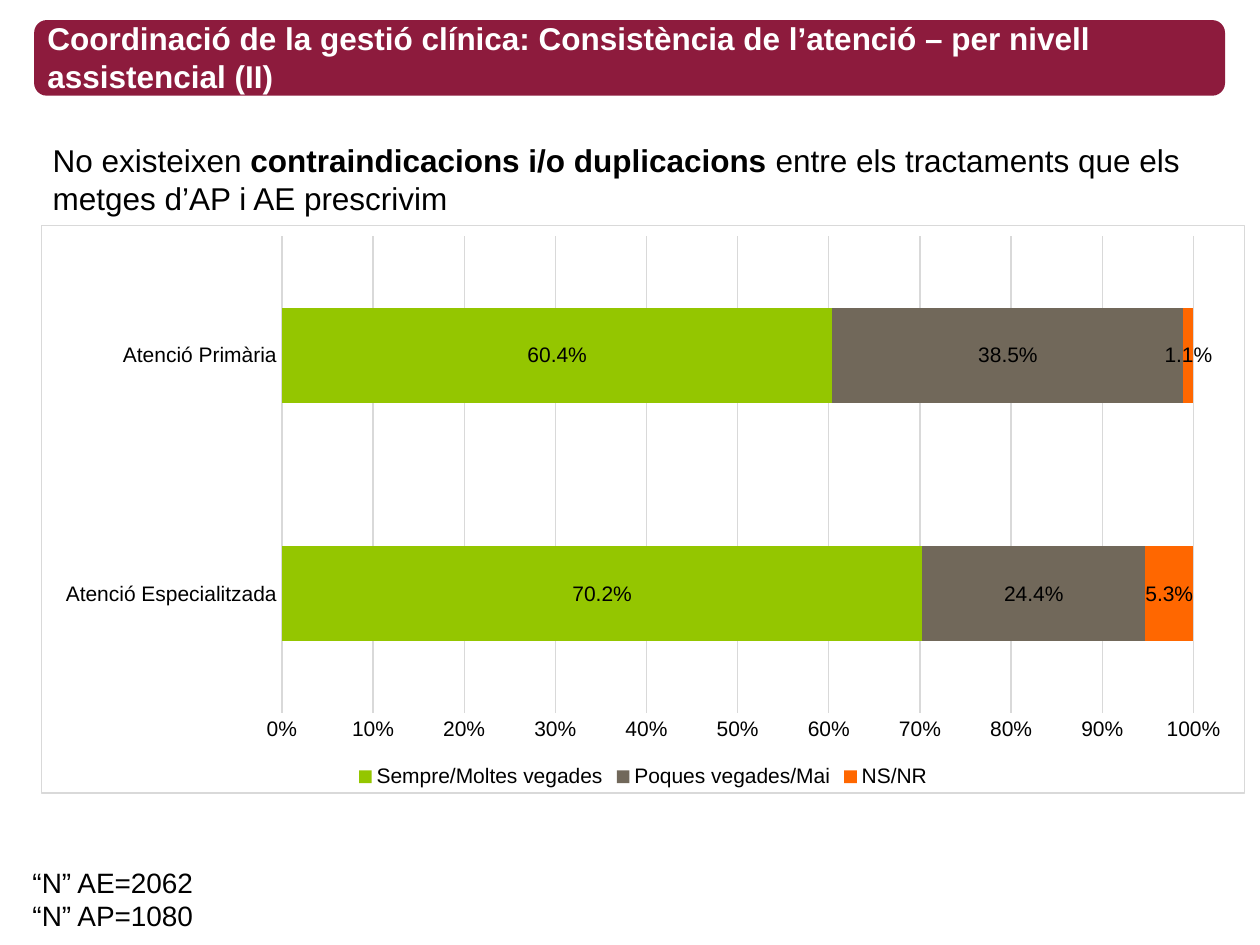
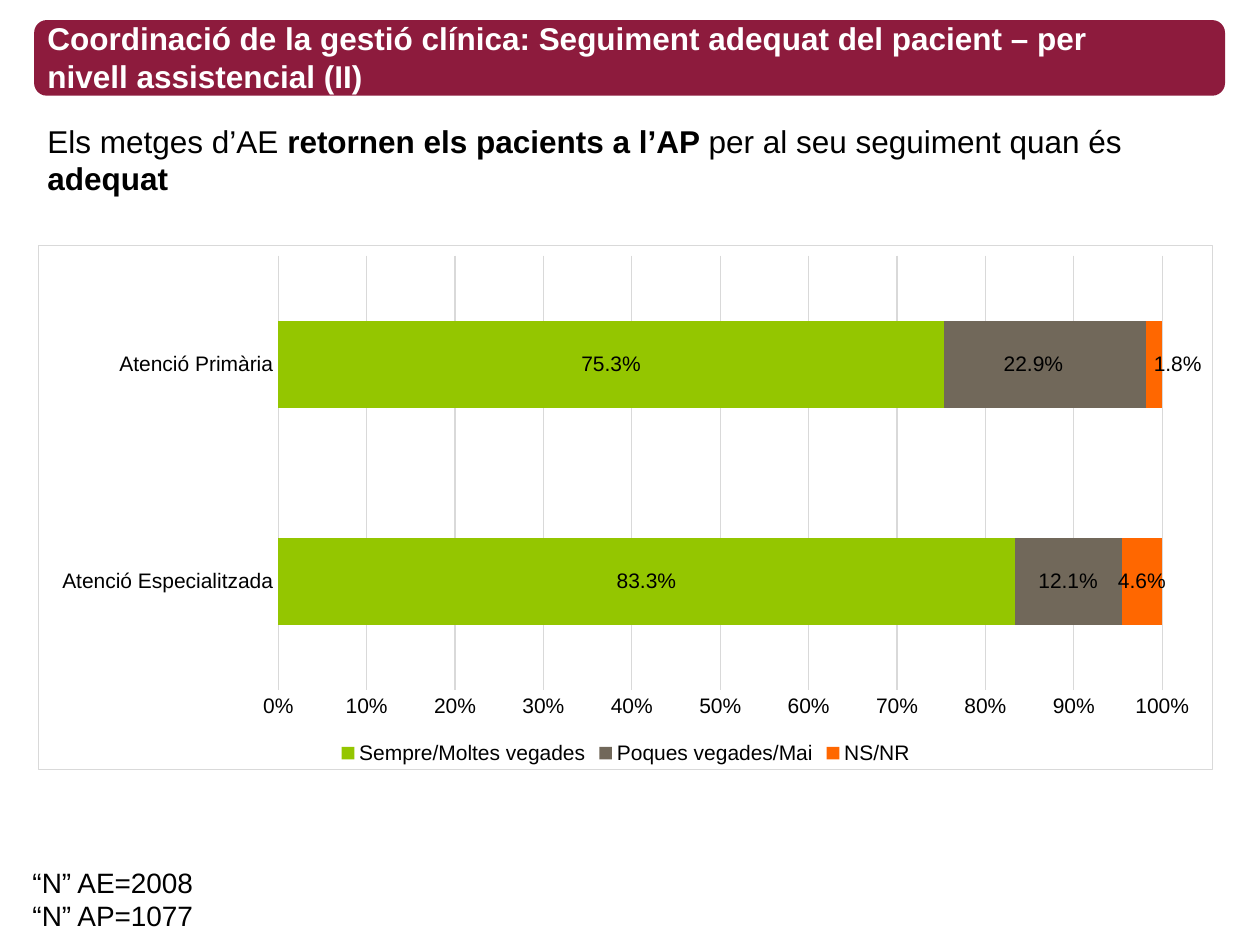
from lxml import etree
from pptx import Presentation
from pptx import util as u
from pptx.chart import data as chart_data
from pptx.dml.color import RGBColor
from pptx.enum import chart as charts, shapes, text
from pptx.oxml import parse_xml
from pptx.oxml import ns

# Content: spans are (text, bold); boxes are (left, top, width, height) in points
COLORS = {"band": "8D1B3D", "white": "FFFFFF", "black": "000000", "grid": "D9D9D9",
          "often": "94C600", "rarely": "71685A", "unknown": "FF6700"}
FONT = "Arial"
BAND_BOX = (19.5, 11.5, 680.5, 43.2)
SAMPLE_BOX = (11.5, 491, 108, 46)
LEVELS = ["Atenció Especialitzada", "Atenció Primària"]
ANSWERS = [("Sempre/Moltes vegades", "often"), ("Poques vegades/Mai", "rarely"),
           ("NS/NR", "unknown")]

SLIDES = [
    {
        "title": "Coordinació de la gestió clínica: Consistència de l’atenció"
                 " – per nivell assistencial (II)",
        "title_box": (20, 7.2, 676, 51),
        "statement": [("No existeixen ", False),
                      ("contraindicacions i/o duplicacions ", True),
                      ("entre els tractaments que els metges d’AP i AE prescrivim", False)],
        "statement_box": (23, 77, 669, 51),
        "shares": [(0.702, 0.604), (0.244, 0.385), (0.053, 0.011)],
        "chart_box": (23.5, 128.3, 688, 325.2),
        "moved_labels": {},
        "samples": ["“N” AE=2062", "“N” AP=1080"],
    },
    {
        "title": "Coordinació de la gestió clínica: Seguiment adequat del pacient"
                 " – per nivell assistencial (II)",
        "title_box": (20, 7.2, 652, 51),
        "statement": [("Els metges d’AE ", False),
                      ("retornen els pacients a l’AP ", True),
                      ("per al seu seguiment quan és ", False),
                      ("adequat", True)],
        "statement_box": (20, 66, 663, 51),
        "shares": [(0.833, 0.753), (0.121, 0.229), (0.046, 0.018)],
        "chart_box": (21.8, 139.8, 671.5, 300.2),
        # (series, point): shift as a share of chart width and height
        "moved_labels": {(1, 1): (-0.01, 0), (2, 1): (0.02, 0)},
        "samples": ["“N” AE=2008", "“N” AP=1077"],
    },
]


def rgb(name):
    return RGBColor.from_string(COLORS[name])


def points(box):
    return [u.Pt(value) for value in box]


def set_font(font, size, color="black", bold=False):
    values = {"name": FONT, "size": u.Pt(size), "bold": bold}
    for key, value in values.items():
        setattr(font, key, value)
    font.color.rgb = rgb(color)


def add_text(page, box, paragraphs, size, color="black"):
    frame = page.shapes.add_textbox(*points(box)).text_frame
    frame.word_wrap = True
    frame.auto_size = text.MSO_AUTO_SIZE.NONE
    for index, spans in enumerate(paragraphs):
        para = frame.add_paragraph() if index else frame.paragraphs[0]
        for words, bold in spans:
            span = para.add_run()
            span.text = words
            set_font(span.font, size, color, bold)


def add_band(page):
    band = page.shapes.add_shape(shapes.MSO_SHAPE.ROUNDED_RECTANGLE, *points(BAND_BOX))
    band.adjustments[0] = 0.167
    band.shadow.inherit = False
    band.fill.solid()
    band.fill.fore_color.rgb = rgb("band")
    band.line.fill.background()


def frame_chart(chart):
    """White chart area with a thin grey border."""
    area = parse_xml(
        f'<c:spPr {ns.nsdecls("c", "a")}>'
        f'<a:solidFill><a:srgbClr val="{COLORS["white"]}"/></a:solidFill>'
        f'<a:ln w="{u.Pt(0.75)}"><a:solidFill><a:srgbClr val="{COLORS["grid"]}"/>'
        '</a:solidFill></a:ln></c:spPr>')
    chart._chartSpace.find(ns.qn("c:chart")).addnext(area)


def move_label(series, point, shift):
    """Shift one data label away from the centre of its bar."""
    label = series.points[point].data_label
    set_font(label.font, 12)
    label.position = charts.XL_LABEL_POSITION.CENTER
    index = series.data_labels._element.xpath(f'c:dLbl/c:idx[@val="{point}"]')[0]
    layout = etree.Element(ns.qn("c:layout"))
    manual = etree.SubElement(layout, ns.qn("c:manualLayout"))
    for axis, value in zip("xy", shift):
        etree.SubElement(manual, ns.qn(f"c:{axis}"), val=str(value))
    number = etree.Element(ns.qn("c:numFmt"), formatCode="0.0%", sourceLinked="0")
    index.addnext(layout)
    layout.addnext(number)


def add_share_chart(page, content):
    data = chart_data.CategoryChartData(number_format="0.0%")
    data.categories = LEVELS
    for (answer, _), shares in zip(ANSWERS, content["shares"]):
        data.add_series(answer, shares)
    chart = page.shapes.add_chart(charts.XL_CHART_TYPE.BAR_STACKED_100,
                                  *points(content["chart_box"]), data).chart
    set_font(chart.font, 12)
    frame_chart(chart)
    chart.has_title = False
    chart.has_legend = True
    chart.legend.position = charts.XL_LEGEND_POSITION.BOTTOM
    chart.legend.include_in_layout = False

    # Axes
    for axis in (chart.category_axis, chart.value_axis):
        axis.major_tick_mark = axis.minor_tick_mark = charts.XL_TICK_MARK.NONE
    chart.value_axis.has_major_gridlines = True
    for line in (chart.category_axis.format.line,
                 chart.value_axis.major_gridlines.format.line):
        line.color.rgb = rgb("grid")
        line.width = u.Pt(0.75)
    chart.value_axis.format.line.fill.background()
    chart.value_axis.tick_labels.number_format = "0%"
    chart.value_axis.tick_labels.number_format_is_linked = False

    # Bars and their labels
    plot = chart.plots[0]
    for key, value in {"gap_width": 150, "overlap": 100, "vary_by_categories": False}.items():
        setattr(plot, key, value)
    for series, (_, color) in zip(plot.series, ANSWERS):
        series.format.fill.solid()
        series.format.fill.fore_color.rgb = rgb(color)
        labels = series.data_labels
        set_font(labels.font, 12)
        for key, value in {"show_value": True, "number_format": "0.0%",
                           "number_format_is_linked": False,
                           "position": charts.XL_LABEL_POSITION.CENTER}.items():
            setattr(labels, key, value)
    for (series, point), shift in content["moved_labels"].items():
        move_label(plot.series[series], point, shift)


def main():
    deck = Presentation()
    deck.slide_width, deck.slide_height = u.Pt(720), u.Pt(540)
    for content in SLIDES:
        page = deck.slides.add_slide(deck.slide_layouts[6])
        add_band(page)
        add_text(page, content["statement_box"], [content["statement"]], 18)
        add_text(page, content["title_box"], [[(content["title"], True)]], 18, "white")
        add_share_chart(page, content)
        add_text(page, SAMPLE_BOX, [[(sample, False)] for sample in content["samples"]], 16)
    deck.save("out.pptx")


if __name__ == "__main__":
    main()
